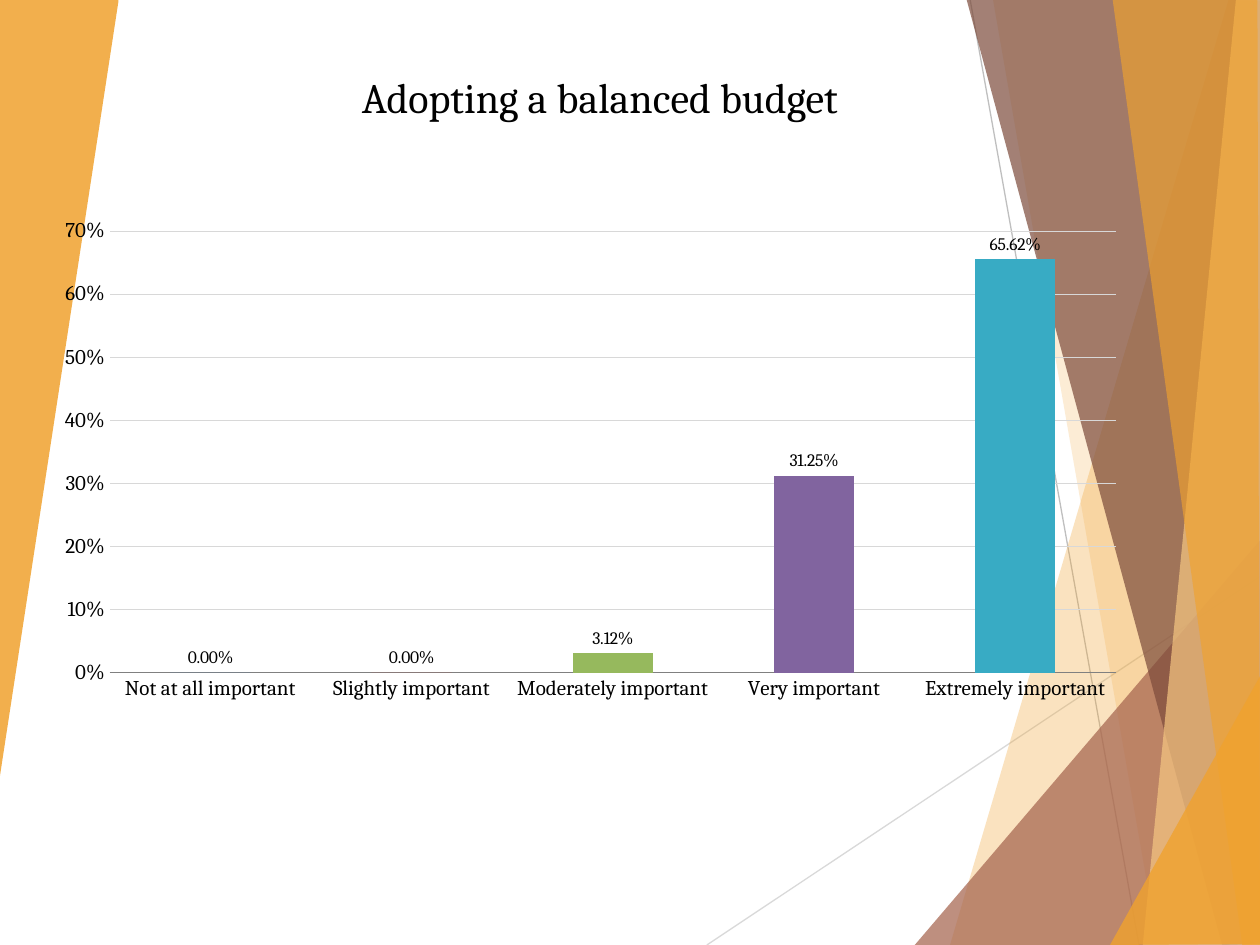
import pptx
import pptx.chart.data
import pptx.dml.color
import pptx.enum.chart
import pptx.enum.shapes
import pptx.enum.text
import pptx.util
from lxml import etree
from pptx.oxml.ns import qn
from pptx.util import Inches

FONT = "Cambria"
COLORS = {
    "text": "000000", "amber": "F0A22E", "sand": "F6C782", "rust": "A5644E",
    "brown": "7C4B3B", "axis": "808080", "grid": "D8D8D8",
    "pale line": "D9D9D9", "gray line": "BFBFBF",
}
TITLE = "Adopting a balanced budget"
TITLE_AREA = (0.42, 0.07, 8.68, 1.39)
CHART_AREA = (0.35, 1.67, 8.68, 4.17)
PLOT_AREA = {"x": 0.06, "y": 0.04, "w": 0.92, "h": 0.84}  # shares of the chart

# category, value, bar colour
RATINGS = [
    ("Not at all important", 0, "4980BA"),
    ("Slightly important", 0, "C6514E"),
    ("Moderately important", 0.0312, "96B95D"),
    ("Very important", 0.3125, "81649F"),
    ("Extremely important", 0.6562, "38ABC4"),
]

# start, end, colour
THIN_LINES = [
    ((5.61, 7.5), (10.01, 4.57), "pale line"),
    ((7.7, 0), (9.04, 7.5), "gray line"),
]

# corners, colour, opacity in percent
FACETS = [
    ([(9.75, 0), (7.54, 7.5), (10.02, 7.51), (10.01, 0.01)], "amber", 30),
    ([(7.88, -0.01), (9.19, 7.5), (10.01, 7.5), (10.01, -0.01)], "amber", 20),
    ([(7.26, 7.5), (10, 4.29), (10.01, 7.5)], "rust", 72),
    ([(7.67, -0.01), (9.7, 7.5), (10.01, 7.49), (10.01, -0.01)], "brown", 70),
    ([(9.81, -0.01), (9.07, 7.5), (10.01, 7.5), (10, -0.01)], "sand", 70),
    ([(8.83, -0.01), (9.86, 7.5), (10, 7.5), (9.98, -0.01)], "amber", 65),
    ([(8.81, 7.5), (10.01, 5.35), (10.01, 7.49)], "amber", 80),
    ([(-0.01, 0), (0.94, -0.01), (0.94, 0.01), (-0.01, 6.22)], "amber", 85),
]


def rgb(value):
    return pptx.dml.color.RGBColor.from_string(value)


def paint(fill, value):
    fill.solid()
    fill.fore_color.rgb = rgb(value)


def style_line(line, color):
    line.color.rgb = rgb(COLORS[color])
    line.width = pptx.util.Pt(0.75)


def style_font(font, size):
    font.name = FONT
    font.size = pptx.util.Pt(size)
    font.color.rgb = rgb(COLORS["text"])


def add_thin_line(page, start, end, color):
    line = page.shapes.add_connector(
        pptx.enum.shapes.MSO_CONNECTOR.STRAIGHT, *map(Inches, start + end))
    style_line(line.line, color)
    etree.SubElement(line._element.spPr, qn("a:effectLst"))


def add_facet(page, corners, color, opacity):
    first, *rest = [tuple(map(Inches, corner)) for corner in corners]
    builder = page.shapes.build_freeform(*first)
    builder.add_line_segments(rest, close=True)
    facet = builder.convert_to_shape()
    facet.shadow.inherit = False
    facet.line.fill.background()
    paint(facet.fill, COLORS[color])
    tint = facet._element.spPr.find(".//" + qn("a:srgbClr"))
    etree.SubElement(tint, qn("a:alpha"), val=str(opacity * 1000))


def add_title(page):
    box = page.shapes.add_shape(
        pptx.enum.shapes.MSO_SHAPE.ROUNDED_RECTANGLE, *map(Inches, TITLE_AREA))
    box.shadow.inherit = False
    box.fill.background()
    box.line.fill.background()
    box.text_frame.word_wrap = True
    box.text_frame.vertical_anchor = pptx.enum.text.MSO_ANCHOR.MIDDLE
    para = box.text_frame.paragraphs[0]
    para.alignment = pptx.enum.text.PP_ALIGN.CENTER
    span = para.add_run()
    span.text = TITLE
    style_font(span.font, 24)


def place_plot(chart):
    """Fix the inner plot area at PLOT_AREA."""
    plot_area = chart._chartSpace.chart.plotArea
    layout = plot_area.find(qn("c:layout"))
    if layout is None:
        layout = etree.Element(qn("c:layout"))
        plot_area.insert(0, layout)
    manual = etree.SubElement(layout, qn("c:manualLayout"))
    settings = {"layoutTarget": "inner", "xMode": "edge", "yMode": "edge", **PLOT_AREA}
    for name, value in settings.items():
        etree.SubElement(manual, qn("c:" + name), val=str(value))


def add_rating_chart(page):
    data = pptx.chart.data.CategoryChartData()
    data.categories = [name for name, _, _ in RATINGS]
    data.add_series("Series 1", [value for _, value, _ in RATINGS])
    chart = page.shapes.add_chart(
        pptx.enum.chart.XL_CHART_TYPE.COLUMN_CLUSTERED,
        *map(Inches, CHART_AREA), data).chart
    chart.has_legend = False
    chart.has_title = False
    style_font(chart.font, 18)
    place_plot(chart)

    for axis in (chart.category_axis, chart.value_axis):
        axis.major_tick_mark = pptx.enum.chart.XL_TICK_MARK.NONE
        axis.minor_tick_mark = pptx.enum.chart.XL_TICK_MARK.NONE
        style_font(axis.tick_labels.font, 12)
    style_line(chart.category_axis.format.line, "axis")
    scale = chart.value_axis
    scale.minimum_scale, scale.maximum_scale, scale.major_unit = 0, 0.7, 0.1
    scale.tick_labels.number_format = "0%"
    scale.tick_labels.number_format_is_linked = False
    scale.format.line.fill.background()
    scale.has_major_gridlines = True
    style_line(scale.major_gridlines.format.line, "grid")

    plot = chart.plots[0]
    plot.gap_width = 150
    plot.vary_by_categories = False
    plot.has_data_labels = True
    labels = plot.data_labels
    labels.show_value = True
    labels.number_format = "0.00%"
    labels.number_format_is_linked = False
    labels.position = pptx.enum.chart.XL_LABEL_POSITION.OUTSIDE_END
    style_font(labels.font, 10)
    for index, (_, _, color) in enumerate(RATINGS):
        paint(plot.series[0].points[index].format.fill, color)


def main():
    deck = pptx.Presentation()
    deck.slide_width, deck.slide_height = Inches(10), Inches(7.5)
    page = deck.slides.add_slide(deck.slide_layouts[6])
    for line in THIN_LINES:
        add_thin_line(page, *line)
    for facet in FACETS:
        add_facet(page, *facet)
    add_title(page)
    add_rating_chart(page)
    deck.save("out.pptx")


if __name__ == "__main__":
    main()
